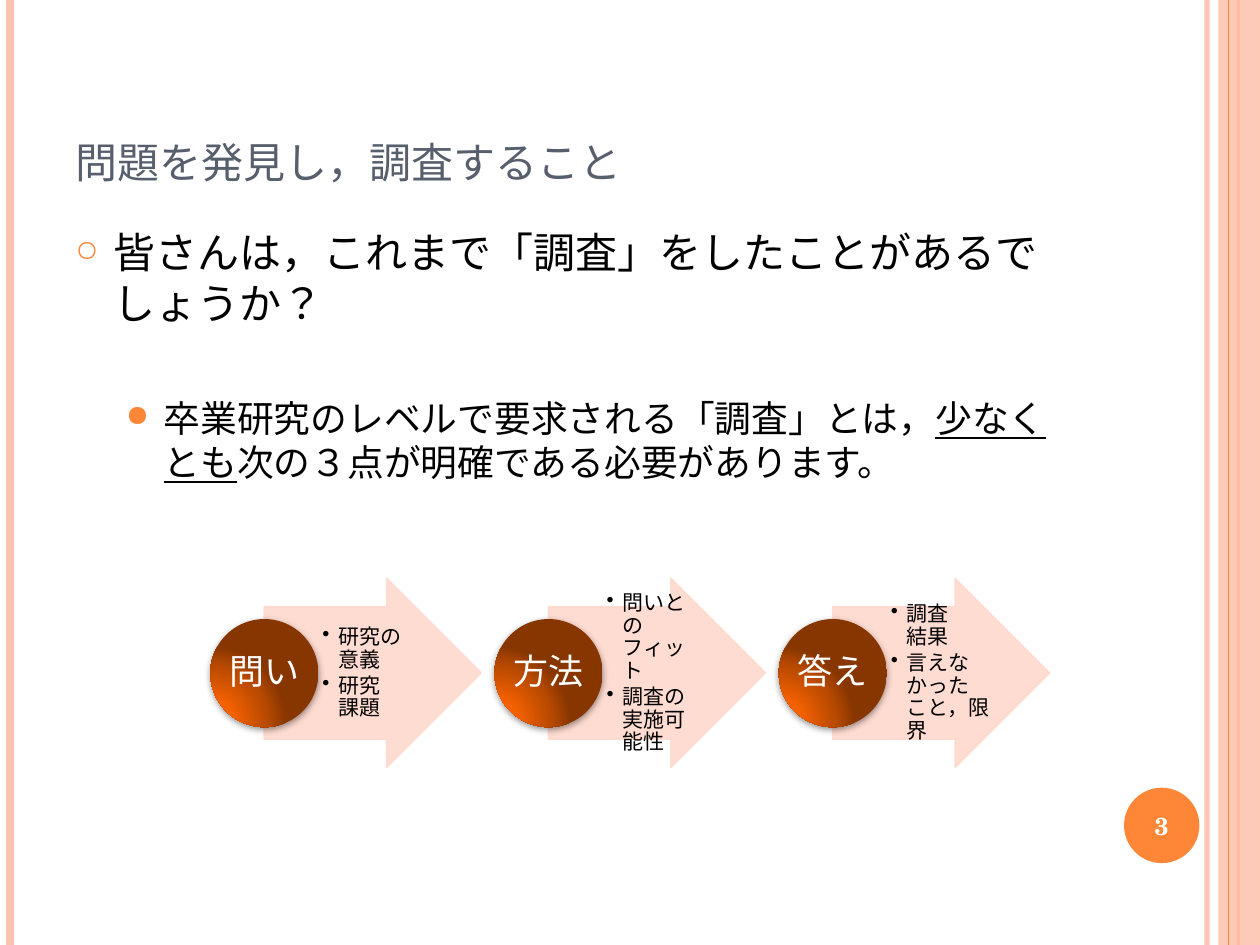
import pptx
import pptx.dml.color
import pptx.enum.shapes
import pptx.enum.text
import pptx.oxml
import pptx.oxml.ns
import pptx.util
from lxml import etree

Cm = pptx.util.Cm
Pt = pptx.util.Pt
qn = pptx.oxml.ns.qn
SHAPES = pptx.enum.shapes.MSO_SHAPE
ANCHOR = pptx.enum.text.MSO_ANCHOR
ALIGN = pptx.enum.text.PP_ALIGN

FONT = "TeX Gyre Schola"
ORANGE, PEACH, PALE = "FE8637", "FEC3AE", "FFD9CE"
SLATE, BLACK, WHITE = "575F6D", "000000", "FFFFFF"
WIDTH, HEIGHT = 25.4, 19.05
STEPS = [
    ("問い", ["研究の意義", "研究\v課題"]),
    ("方法", ["問いとのフィット", "調査の実施可能性"]),
    ("答え", ["調査\v結果", "言えなかったこと，限界"]),
]


def color(value):
    """Return the RGB colour for a hex string."""
    return pptx.dml.color.RGBColor.from_string(value)


def set_opacity(shape, percent):
    """Give every solid colour of a shape the same opacity."""
    for element in shape._element.spPr.iter(qn("a:srgbClr")):
        etree.SubElement(element, qn("a:alpha"), val=str(percent * 1000))


def add_shape(slide, kind, box, fill=None):
    """Add a flat shape without outline."""
    shape = slide.shapes.add_shape(kind, *map(Cm, box))
    shape.shadow.inherit = False
    shape.line.fill.background()
    if fill:
        shape.fill.solid()
        shape.fill.fore_color.rgb = color(fill)
    return shape


def add_rule(slide, left, value, width):
    """Add a vertical line over the full slide height."""
    line = slide.shapes.add_connector(
        pptx.enum.shapes.MSO_CONNECTOR.STRAIGHT, Cm(left), 0, Cm(left), Cm(HEIGHT))
    line.line.color.rgb = color(value)
    line.line.width = Pt(width)
    etree.SubElement(line._element.spPr, qn("a:effectLst"))
    return line


def set_frame(shape, anchor, inset=None):
    """Turn on wrapping, and set the anchor and the equal insets of a shape's text."""
    frame = shape.text_frame
    frame.word_wrap = True
    frame.vertical_anchor = anchor
    if inset is not None:
        frame.margin_left = frame.margin_right = Cm(inset)
        frame.margin_top = frame.margin_bottom = Cm(inset)
    return frame


def style(paragraph, size, value, bold=False):
    """Set the font of a paragraph and the language of its runs."""
    font = paragraph.font
    font.name, font.size, font.bold = FONT, Pt(size), bold
    font.color.rgb = color(value)
    for run in paragraph.runs:
        run._r.get_or_add_rPr().set("lang", "ja-JP")


def set_bullet(paragraph, character, margin, indent, value, percent=100):
    """Add a hanging bullet to a paragraph."""
    properties = paragraph._p.get_or_add_pPr()
    properties.set("marL", str(Cm(margin)))
    properties.set("indent", str(-Cm(indent)))
    bullet_color = etree.Element(qn("a:buClr"))
    etree.SubElement(bullet_color, qn("a:srgbClr"), val=value)
    bullet_size = etree.Element(qn("a:buSzPct"), val=str(percent * 1000))
    bullet = etree.Element(qn("a:buChar"), char=character)
    defaults = properties.find(qn("a:defRPr"))
    for element in (bullet_color, bullet_size, bullet):
        defaults.addprevious(element)


def add_frame_decoration(slide):
    """Draw the rules and the band at the slide edges."""
    set_opacity(add_rule(slide, 24.33, PEACH, 3), 93)
    add_rule(slide, 0.2, PEACH, 4.5)
    add_rule(slide, 24.97, ORANGE, 1.5)
    band = add_shape(slide, SHAPES.RECTANGLE, (24.56, 0, WIDTH - 24.56, HEIGHT), PEACH)
    set_opacity(band, 87)
    add_rule(slide, 24.77, ORANGE, 0.75)


def add_page_number(slide, left, top, size):
    """Draw the round page number."""
    circle = add_shape(slide, SHAPES.OVAL, (left, top, size, size), ORANGE)
    paragraph = set_frame(circle, ANCHOR.MIDDLE, 0).paragraphs[0]
    paragraph.text = "3"
    paragraph.alignment = ALIGN.CENTER
    style(paragraph, 14, WHITE, True)


def add_title(slide, box):
    """Write the title in small capitals."""
    frame = set_frame(slide.shapes.add_textbox(*map(Cm, box)), ANCHOR.BOTTOM)
    paragraph = frame.paragraphs[0]
    paragraph.text = "問題を発見し，調査すること"
    style(paragraph, 30, SLATE)
    paragraph.runs[0]._r.get_or_add_rPr().set("cap", "small")


def add_body(slide, box):
    """Write the question and the requirement below it."""
    frame = set_frame(slide.shapes.add_textbox(*map(Cm, box)), ANCHOR.TOP)
    question = frame.paragraphs[0]
    question.text = "皆さんは，これまで「調査」をしたことがあるでしょうか？"
    question.space_before = Pt(6)
    style(question, 24, BLACK)
    set_bullet(question, "○", 0.76, 0.76, ORANGE, 70)
    requirement = frame.add_paragraph()
    requirement.level = 1
    requirement.space_before = Pt(39)
    for text, underline in [("卒業研究のレベルで要求される「調査」とは，", False),
                            ("少なくとも", True),
                            ("次の３点が明確である必要があります。", False)]:
        run = requirement.add_run()
        run.text = text
        run.font.underline = underline
    style(requirement, 21, BLACK)
    set_bullet(requirement, "●", 1.78, 0.76, ORANGE, 80)


def add_ball(slide, box, label):
    """Draw a shaded ball with a label."""
    ball = add_shape(slide, SHAPES.OVAL, box)
    properties = ball._element.spPr
    gradient = etree.Element(qn("a:gradFill"), rotWithShape="1")
    stops = etree.SubElement(gradient, qn("a:gsLst"))
    for position, value in [(0, "FD6400"), (30, "F46100"), (75, "B74900"), (100, "873600")]:
        stop = etree.SubElement(stops, qn("a:gs"), pos=str(position * 1000))
        etree.SubElement(stop, qn("a:srgbClr"), val=value)
    shade = etree.SubElement(gradient, qn("a:path"), path="circle")
    etree.SubElement(shade, qn("a:fillToRect"), l="5000", t="100000", r="120000", b="10000")
    properties.find(qn("a:prstGeom")).addnext(gradient)
    shadow = etree.SubElement(
        properties.find(qn("a:effectLst")), qn("a:outerShdw"), blurRad=str(Pt(4)),
        dist=str(Pt(1.6)), dir="5400000", rotWithShape="0")
    shadow_color = etree.SubElement(shadow, qn("a:srgbClr"), val=BLACK)
    etree.SubElement(shadow_color, qn("a:alpha"), val="42000")
    paragraph = set_frame(ball, ANCHOR.MIDDLE, 0.03).paragraphs[0]
    paragraph.text = label
    paragraph.alignment = ALIGN.CENTER
    paragraph.line_spacing = 0.9
    style(paragraph, 20, WHITE)


def add_step(slide, left, top, label, points):
    """Draw one step: an arrow, its points and a ball."""
    arrow = add_shape(slide, SHAPES.RIGHT_ARROW, (left + 1.09, top, 4.37, 3.81), PALE)
    arrow.adjustments[0], arrow.adjustments[1] = 0.7, 0.5
    arrow.line.color.rgb = color(PALE)
    arrow.line.width = Pt(1)
    set_opacity(arrow, 90)
    textbox = slide.shapes.add_textbox(*map(Cm, (left + 2.18, top + 0.58, 2.13, 2.67)))
    frame = set_frame(textbox, ANCHOR.MIDDLE, 0.03)
    frame.margin_left, frame.margin_right = Cm(0.08), Cm(0.05)
    for index, point in enumerate(points):
        paragraph = frame.add_paragraph() if index else frame.paragraphs[0]
        paragraph.text = point
        paragraph.level = 1
        paragraph.line_spacing = 0.9
        paragraph.space_after = Pt(1.8)
        style(paragraph, 12, BLACK)
        set_bullet(paragraph, "•", 0.32, 0.32, BLACK)
    add_ball(slide, (left, top + 0.82, 2.18, 2.18), label)


def main():
    """Build the slide and save it."""
    presentation = pptx.Presentation()
    presentation.slide_width, presentation.slide_height = Cm(WIDTH), Cm(HEIGHT)
    slide = presentation.slides.add_slide(presentation.slide_layouts[6])
    add_frame_decoration(slide)
    add_page_number(slide, 22.66, 15.88, 1.52)
    add_title(slide, (1.27, 0.76, 20.75, 3.18))
    add_body(slide, (1.27, 4.45, 20.75, 13.54))
    for index, (label, points) in enumerate(STEPS):
        add_step(slide, 4.24 + 5.73 * index, 11.66, label, points)
    presentation.save("out.pptx")


if __name__ == "__main__":
    main()
